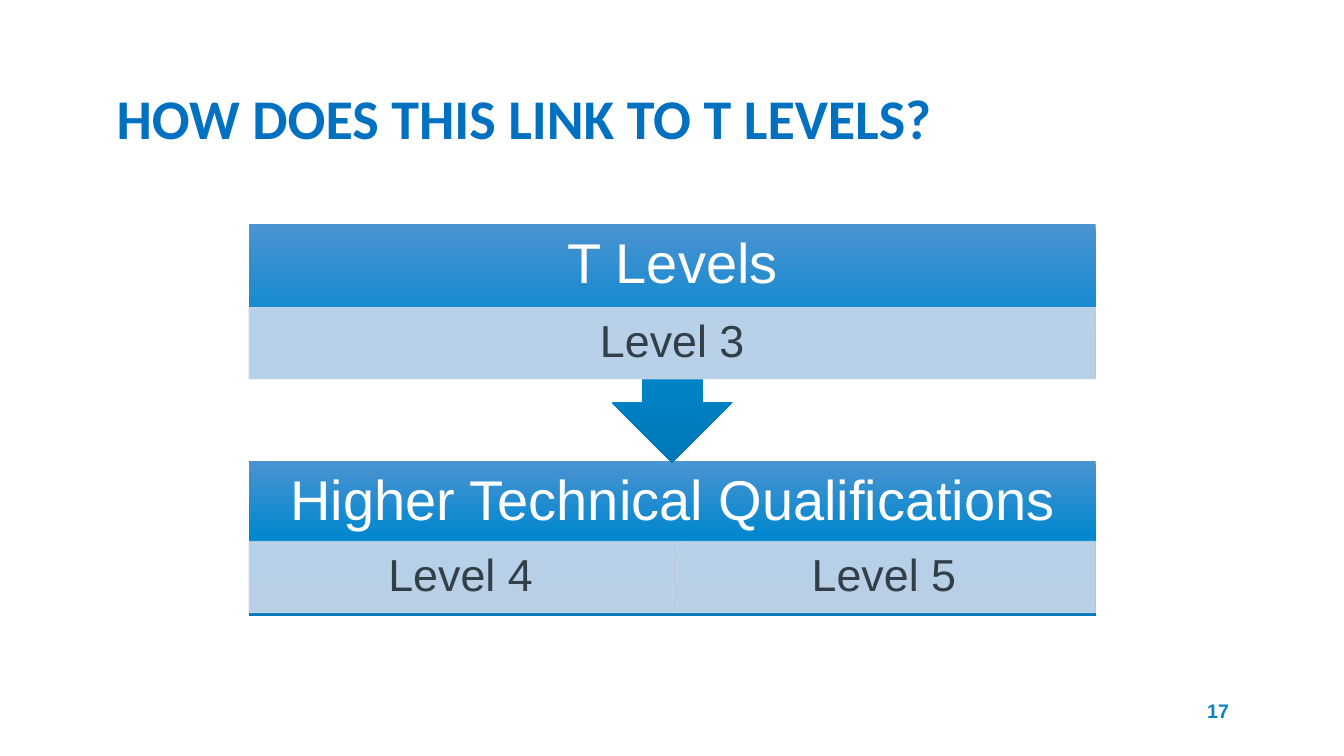
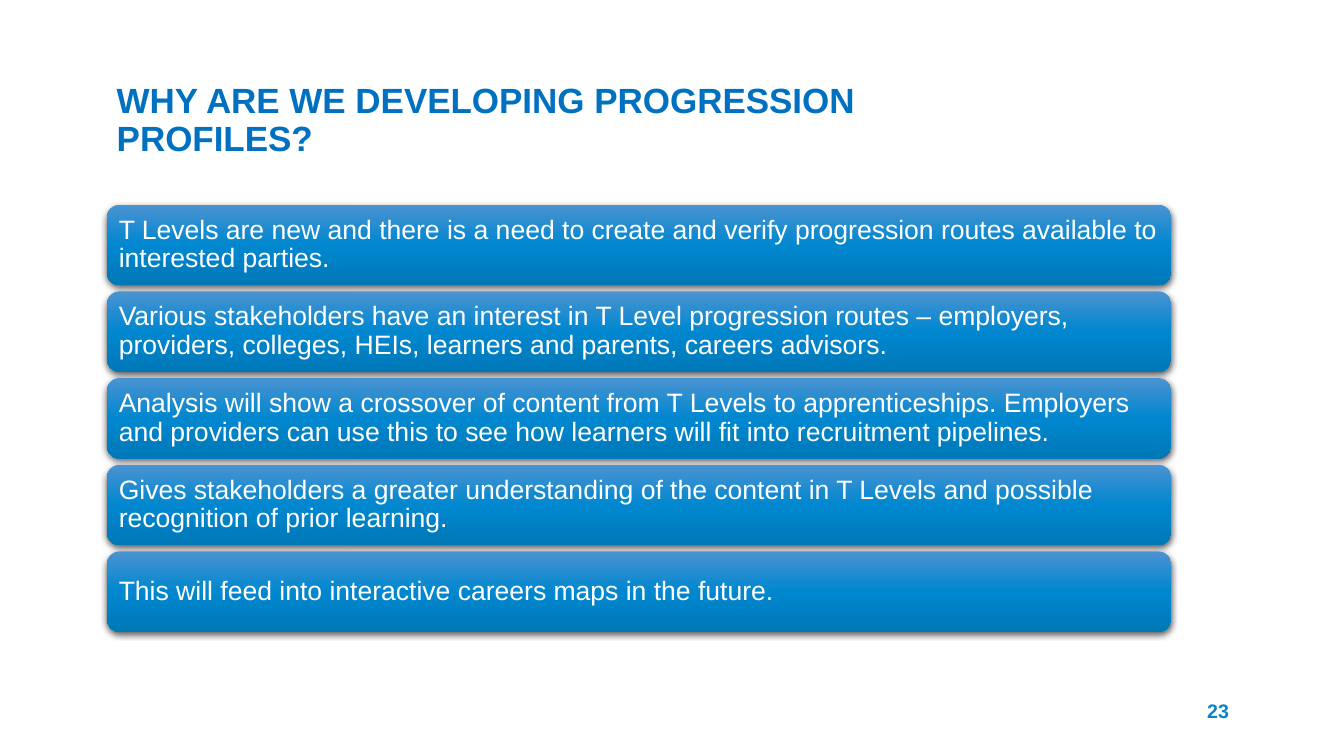
from copy import deepcopy
from dataclasses import dataclass

from lxml import etree
from pptx import Presentation
from pptx.dml.color import RGBColor
from pptx.enum import shapes, text
from pptx.oxml.ns import qn
from pptx.util import Pt


# Theme
@dataclass(frozen=True)
class Theme:
    font: str = "Arial"
    title: str = "0070C0"
    number: str = "0885C7"
    light: str = "FFFFFF"
    dark: str = "333F48"
    strip: str = "CCD9EB"
    gradient: tuple = ((0, "4B93D1"), (0.5, "0087CF"), (1, "0078B8"))
    number_size: int = 14
    heading_size: int = 40
    level_size: int = 32
    reason_size: int = 19


THEME = Theme()
SHAPE = shapes.MSO_SHAPE
ALIGN = text.PP_ALIGN

# Content
LINK_TITLE = "HOW DOES THIS LINK TO T LEVELS?"
STAGES = [  # heading, levels, shape, top, height, offset of the level strip
    ("Higher Technical Qualifications", ["Level 4", "Level 5"],
     SHAPE.RECTANGLE, 329.04, 110.88, 57.6),
    ("T Levels", ["Level 3"],
     SHAPE.DOWN_ARROW_CALLOUT, 159.84, 170.64, 59.76),
]
REASONS_TITLE = "WHY ARE WE DEVELOPING PROGRESSION PROFILES?"
REASONS = [
    "T Levels are new and there is a need to create and verify progression "
    "routes available to interested parties.",
    "Various stakeholders have an interest in T Level progression routes – "
    "employers, providers, colleges, HEIs, learners and parents, careers advisors.",
    "Analysis will show a crossover of content from T Levels to apprenticeships. "
    "Employers and providers can use this to see how learners will fit into "
    "recruitment pipelines.",
    "Gives stakeholders a greater understanding of the content in T Levels and "
    "possible recognition of prior learning.",
    "This will feed into interactive careers maps in the future.",
]

# Layout, in points
STAGE_LEFT, STAGE_WIDTH, STRIP_HEIGHT = 177.84, 604.8, 51.12
REASON_LEFT, REASON_TOP, REASON_WIDTH = 76.32, 146.16, 760.32
REASON_HEIGHT, REASON_GAP = 57.6, 4.32


# Shared helpers
def write(shape, words, size, color, align=ALIGN.LEFT, font=THEME.font,
          bold=False, insets=(7.2, 3.6, 7.2, 3.6), spacing=0.9):
    frame = shape.text_frame
    frame.word_wrap = True
    frame.vertical_anchor = text.MSO_ANCHOR.MIDDLE
    (frame.margin_left, frame.margin_top,
     frame.margin_right, frame.margin_bottom) = map(Pt, insets)
    para = frame.paragraphs[0]
    para.text = words
    para.alignment = align
    para.line_spacing = spacing
    para.font.name, para.font.size, para.font.bold = font, Pt(size), bold
    para.font.color.rgb = RGBColor.from_string(color)


def add_block(page, kind, *place):
    block = page.shapes.add_shape(kind, *map(Pt, place))
    block.shadow.inherit = False
    return block


def add_gradient_block(page, kind, *place):
    block = add_block(page, kind, *place)
    block.line.fill.background()
    block.fill.gradient()
    block.fill.gradient_angle = 270
    stop_list = block.element.find(".//" + qn("a:gsLst"))
    stop_list.append(deepcopy(stop_list[-1]))
    for stop, (position, color) in zip(block.fill.gradient_stops, THEME.gradient):
        stop.position = position
        stop.color.rgb = RGBColor.from_string(color)
    return block


def add_level(page, words, *place):
    level = add_block(page, SHAPE.RECTANGLE, *place)
    level.fill.solid()
    level.fill.fore_color.rgb = RGBColor.from_string(THEME.strip)
    level.line.color.rgb = RGBColor.from_string(THEME.strip)
    level.line.width = Pt(0.5)
    for color in level.element.iter(qn("a:srgbClr")):
        etree.SubElement(color, qn("a:alpha"), val="90000")
    write(level, words, THEME.level_size, THEME.dark, ALIGN.CENTER,
          insets=(18, 3, 18, 3))


def add_soft_shadow(shape):
    effects = shape.element.find(".//" + qn("a:effectLst"))
    shadow = etree.SubElement(effects, qn("a:outerShdw"), blurRad=str(Pt(4.5)),
                              dist=str(Pt(1.5)), dir="5400000", rotWithShape="0")
    color = etree.SubElement(shadow, qn("a:srgbClr"), val="000000")
    etree.SubElement(color, qn("a:alpha"), val="63000")


def add_page(deck, title, number, size, font=THEME.font):
    page = deck.slides.add_slide(deck.slide_layouts[6])
    title_box = page.shapes.add_textbox(Pt(76.32), Pt(34.56), Pt(607), Pt(104.4))
    write(title_box, title, size, THEME.title, font=font, bold=True)
    number_box = page.shapes.add_textbox(Pt(823), Pt(493.2), Pt(62), Pt(28.8))
    write(number_box, number, THEME.number_size, THEME.number, ALIGN.RIGHT,
          bold=True, spacing=1.0)
    return page


# Slides
def build_link_page(deck):
    page = add_page(deck, LINK_TITLE, "17", 40, "Calibri")
    for heading, levels, kind, top, height, strip_offset in STAGES:
        stage = add_gradient_block(page, kind, STAGE_LEFT, top, STAGE_WIDTH, height)
        write(stage, heading, THEME.heading_size, THEME.light, ALIGN.CENTER,
              insets=(22, 0, 22, STRIP_HEIGHT))
        width = STAGE_WIDTH / len(levels)
        for index, level in enumerate(levels):
            add_level(page, level, STAGE_LEFT + index * width, top + strip_offset,
                      width, STRIP_HEIGHT)


def build_reasons_page(deck):
    page = add_page(deck, REASONS_TITLE, "23", 25)
    for index, reason in enumerate(REASONS):
        top = REASON_TOP + index * (REASON_HEIGHT + REASON_GAP)
        bar = add_gradient_block(page, SHAPE.ROUNDED_RECTANGLE, REASON_LEFT, top,
                                 REASON_WIDTH, REASON_HEIGHT)
        add_soft_shadow(bar)
        write(bar, reason, THEME.reason_size, THEME.light, insets=(5.76,) * 4)


def main():
    deck = Presentation()
    deck.slide_width, deck.slide_height = Pt(960), Pt(540)
    build_link_page(deck)
    build_reasons_page(deck)
    deck.save("out.pptx")


if __name__ == "__main__":
    main()
